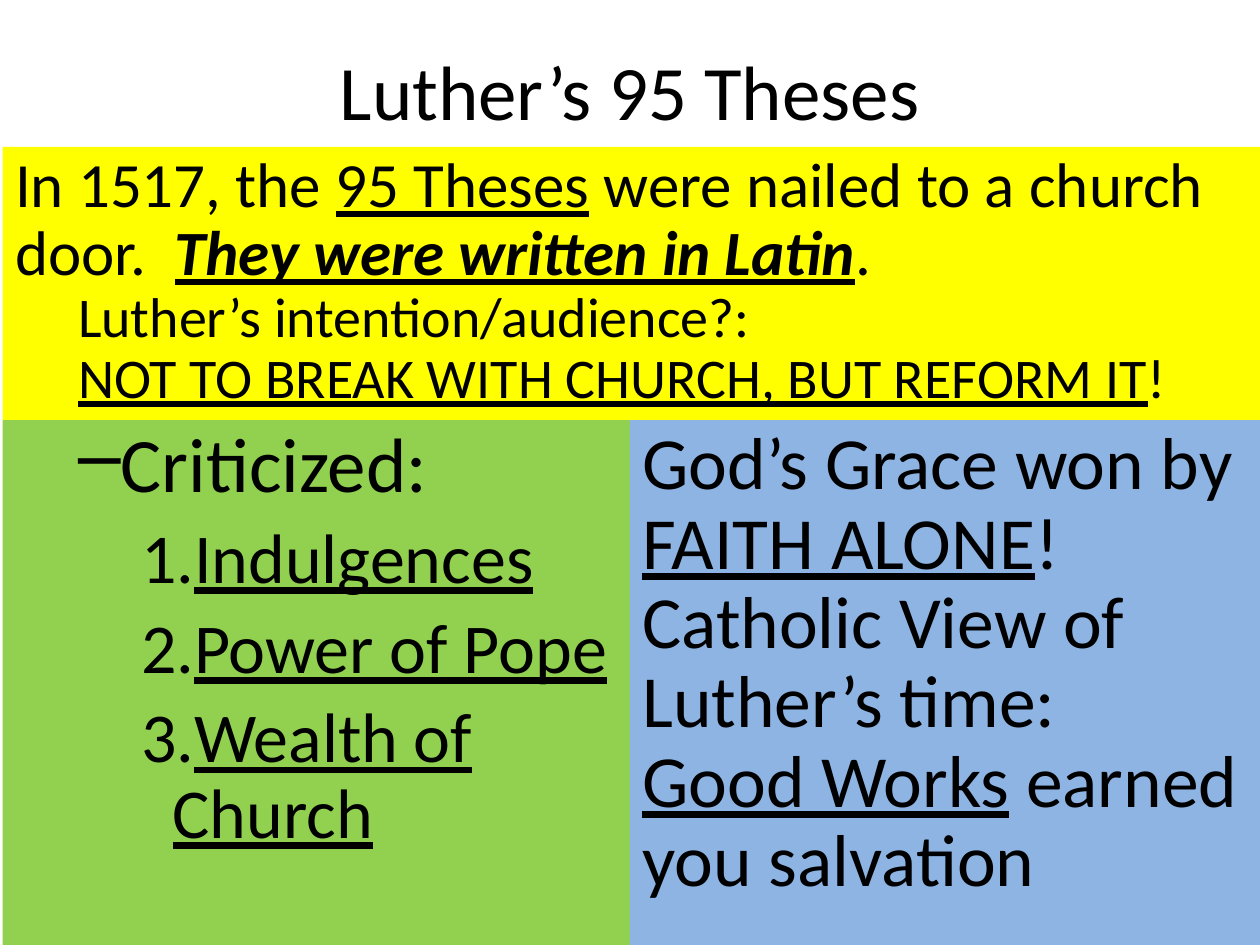
from pptx import Presentation
from pptx.dml.color import RGBColor
from pptx.enum.shapes import MSO_SHAPE as Shape
from pptx.enum.text import MSO_ANCHOR as Anchor, PP_ALIGN as Align
from pptx.oxml.ns import qn
from pptx.util import Pt
from lxml.etree import SubElement

COLORS = {
    "text": "000000",
    "events": "FFFF00",
    "criticism": "92D050",
    "salvation": "8EB4E3",
}
FONT = "Calibri"

# Panel edges, in points
LEFT, MIDDLE, RIGHT = 1.5, 360, 720
TOP, SPLIT, BOTTOM = 84, 240, 540


def color(name):
    return RGBColor.from_string(COLORS[name])


def add_title(page, text):
    box = page.shapes.add_textbox(Pt(36), Pt(6.5), Pt(648), Pt(90))
    frame = box.text_frame
    frame.word_wrap = True
    frame.vertical_anchor = Anchor.MIDDLE
    para = frame.paragraphs[0]
    para.alignment = Align.CENTER
    fill_paragraph(para, [(text, "")], 44)


def add_panel(page, fill, left, top, right, bottom):
    """Draw a filled rectangle and return its text frame."""
    box = page.shapes.add_shape(
        Shape.RECTANGLE, Pt(left), Pt(top), Pt(right - left), Pt(bottom - top))
    box.shadow.inherit = False
    box.fill.solid()
    box.fill.fore_color.rgb = color(fill)
    box.line.fill.background()
    frame = box.text_frame
    frame.word_wrap = True
    frame.vertical_anchor = Anchor.TOP
    return frame


def set_indent(para, margin, hanging=0, bullet=None):
    """Indent a paragraph; bullet is a (tag, attribute, value) triple."""
    props = para._p.get_or_add_pPr()
    props.set("marL", str(Pt(margin)))
    props.set("indent", str(-Pt(hanging)))
    if bullet:
        tag, attribute, value = bullet
        SubElement(props, qn(tag)).set(attribute, value)


def fill_paragraph(para, spans, size):
    """Write (text, style) spans; style letters are b, i and u."""
    para.font.name = FONT
    para.font.size = Pt(size)
    para.font.color.rgb = color("text")
    for text, style in spans:
        span = para.add_run()
        span.text = text
        if "b" in style:
            span.font.bold = True
        if "i" in style:
            span.font.italic = True
        if "u" in style:
            span.font.underline = True


def add_paragraph(frame, spans, size, level=0, before=0, indent=(0,)):
    first = frame.paragraphs[0]
    para = first if not first.runs else frame.add_paragraph()
    para.alignment = Align.LEFT
    para.level = level
    para.line_spacing = 0.9
    para.space_before = Pt(before)
    set_indent(para, *indent)
    fill_paragraph(para, spans, size)


def main():
    deck = Presentation()
    deck.slide_width, deck.slide_height = Pt(720), Pt(540)
    page = deck.slides.add_slide(deck.slide_layouts[6])

    add_title(page, "Luther’s 95 Theses")

    # Criticism list
    criticism = add_panel(page, "criticism", LEFT, SPLIT, MIDDLE, BOTTOM)
    dash = ("a:buChar", "char", "–")
    number = ("a:buAutoNum", "type", "arabicPeriod")
    add_paragraph(criticism, [("Criticized:", "")], 44, level=1,
                  indent=(58.5, 22.5, dash))
    for target in ("Indulgences", "Power of Pope", "Wealth of Church"):
        add_paragraph(criticism, [(target, "u")], 40, level=2, before=8,
                      indent=(90, 18, number))

    # Events and intention
    events = add_panel(page, "events", LEFT, TOP, RIGHT, SPLIT)
    add_paragraph(events, [
        ("In 1517, the ", ""),
        ("95 Theses", "u"),
        (" were nailed to a church door.  ", ""),
        ("They were written in Latin", "biu"),
        (".", ""),
    ], 36)
    for spans in (
        [("Luther’s intention/audience?:", "")],
        [("NOT TO BREAK WITH CHURCH, BUT REFORM IT", "u"), ("!", "")],
    ):
        add_paragraph(events, spans, 32, level=1, indent=(36,))

    # Views of salvation
    salvation = add_panel(page, "salvation", MIDDLE, SPLIT, RIGHT, 567.5)
    add_paragraph(salvation, [
        ("God’s Grace won by ", ""),
        ("FAITH ALONE", "u"),
        ("!  Catholic View of Luther’s time:  ", ""),
        ("Good Works", "u"),
        (" earned you salvation", ""),
    ], 42)

    deck.save("out.pptx")


if __name__ == "__main__":
    main()
